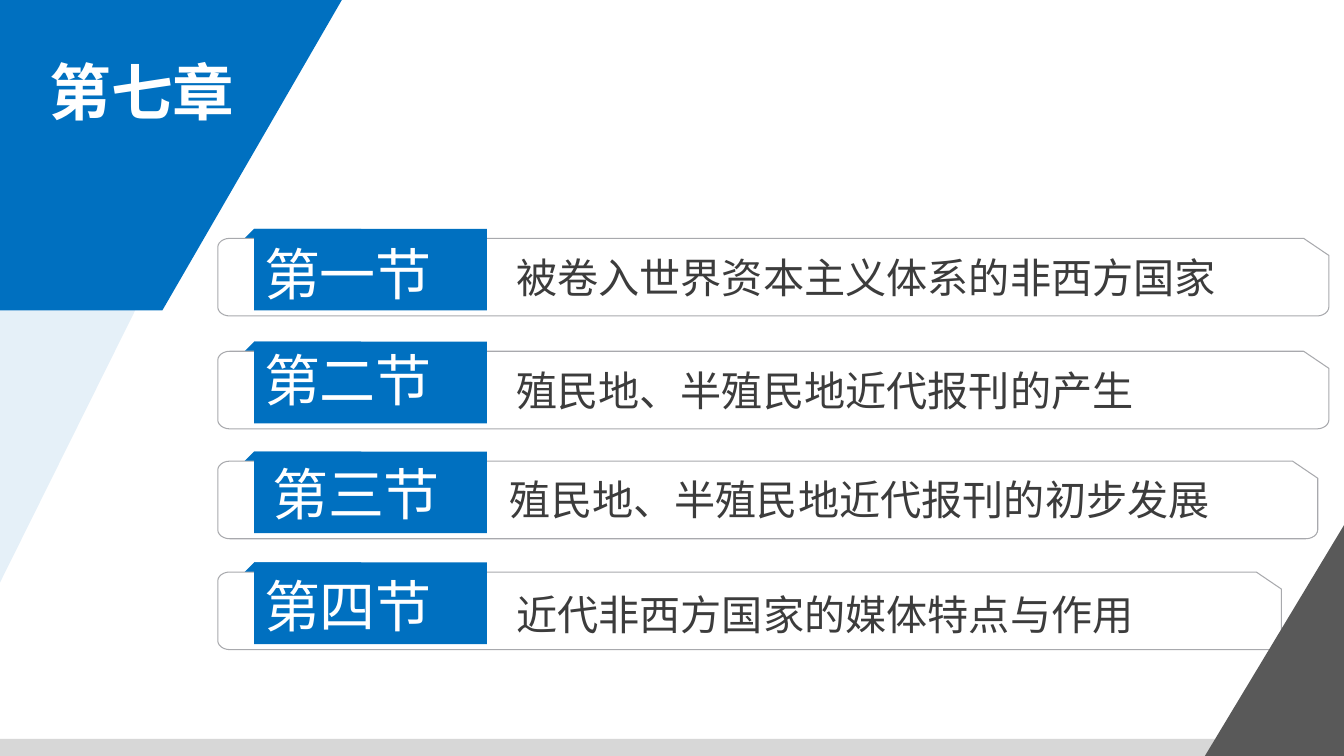
from math import cos, sin, pi
from pptx import Presentation
from pptx.util import Inches, Pt
from pptx.dml.color import RGBColor as RGB
from pptx.enum.shapes import MSO_SHAPE as Shape
from pptx.enum.text import MSO_ANCHOR as Anchor, PP_ALIGN as Align
from pptx.oxml.ns import qn
from lxml.etree import SubElement as Sub

FONT = "Noto Sans CJK SC"
BLUE, GREY, WHITE, INK, EDGE = "0070C0", "595959", "FFFFFF", "3C3C3C", "A8A9AD"

# Tag, its left and top; heading, its left and top; row top and right edge
ROWS = [
    ("第一节", 2.52, 2.32, "被卷入世界资本主义体系的非西方国家", 5.02, 2.45, 2.27, 13.18),
    ("第二节", 2.52, 3.38, "殖民地、半殖民地近代报刊的产生", 5.02, 3.57, 3.39, 13.18),
    ("第三节", 2.6, 4.51, "殖民地、半殖民地近代报刊的初步发展", 4.96, 4.66, 4.48, 13.07),
    ("第四节", 2.52, 5.62, "近代非西方国家的媒体特点与作用", 5.02, 5.8, 5.58, 12.71),
]


def color(code):
    return RGB.from_string(code)


def paint(shape, fill, line=None, alpha=None):
    shape.shadow.inherit = False
    shape.fill.solid()
    shape.fill.fore_color.rgb = color(fill)
    if alpha:
        tone = shape.fill._xPr.find(qn("a:solidFill"))[0]
        Sub(tone, qn("a:alpha"), val=str(alpha * 1000))
    if line:
        shape.line.color.rgb = color(line)
        shape.line.width = Pt(0)
    else:
        shape.line.fill.background()


def poly(slide, points, fill, line=None, alpha=None):
    spots = [(Inches(x), Inches(y)) for x, y in points]
    build = slide.shapes.build_freeform(*spots[0])
    build.add_line_segments(spots[1:], close=True)
    paint(build.convert_to_shape(), fill, line, alpha)


def rect(slide, x, y, w, h, fill, alpha=None):
    box = slide.shapes.add_shape(Shape.RECTANGLE, Inches(x), Inches(y), Inches(w), Inches(h))
    paint(box, fill, alpha=alpha)


def write(box, text, size, code, bold=False):
    frame = box.text_frame
    frame.text = text
    frame.word_wrap = True
    frame.vertical_anchor = Anchor.MIDDLE
    para = frame.paragraphs[0]
    para.alignment = Align.LEFT
    font = para.runs[0].font
    font.size, font.bold, font.name = Pt(size), bold, FONT
    font.color.rgb = color(code)
    Sub(font._element, qn("a:ea"), typeface=FONT)


def label(slide, x, y, w, h, text, size, code):
    box = slide.shapes.add_textbox(Inches(x), Inches(y), Inches(w), Inches(h))
    write(box, text, size, code)


def arc(cx, cy, start):
    """Points of a rounded corner, a quarter turn clockwise from start."""
    turns = [start + pi / 2 * i / 6 for i in range(7)]
    return [(cx + 0.12 * cos(t), cy + 0.09 * sin(t)) for t in turns]


def frame(slide, top, right):
    """Outline with three round corners and one cut corner."""
    left, base = 2.16, top + 0.77
    points = [(right - 0.25, top), (right, top + 0.17)]
    points += arc(right - 0.12, base - 0.09, 0)
    points += arc(left + 0.12, base - 0.09, pi / 2)
    points += arc(left + 0.12, top + 0.09, pi)
    poly(slide, points, WHITE, EDGE)


def row(slide, tag, tag_x, tag_y, head, head_x, head_y, top, right):
    fold = [(2.52, top), (3.58, top), (3.71, top + 0.12), (2.4, top + 0.12)]
    poly(slide, fold, BLUE)
    frame(slide, top + 0.095, right)
    rect(slide, 2.52, top, 2.31, 0.81, BLUE)
    label(slide, head_x, head_y, 8.3, 0.59, head, 29.4, INK)
    label(slide, tag_x, tag_y, 2.31, 0.77, tag, 40, WHITE)


def title(slide, text):
    box = slide.shapes.title
    box.left, box.top = Inches(0.39), Inches(0.48)
    box.width, box.height = Inches(3.12), Inches(0.84)
    write(box, text, 44, WHITE, True)
    # Bring the title in front of the blue panel
    slide.shapes._spTree.append(box._element)


def main():
    deck = Presentation()
    deck.slide_width, deck.slide_height = Inches(13.33), Inches(7.5)
    slide = deck.slides.add_slide(deck.slide_layouts[5])

    # Base decor and corner panels
    poly(slide, [(0.16, 0.24), (0.7, 0.24), (0.16, 1.14)], BLUE)
    rect(slide, 0, 7.33, 13.33, 0.17, GREY, 24)
    poly(slide, [(0.72, 0.84), (0.41, 0.84), (0.72, 0.32)], GREY)
    poly(slide, [(0, 0), (2.87, 0), (0, 5.78)], BLUE, alpha=10)
    poly(slide, [(0, 0), (3.39, 0), (1.61, 3.08), (0, 3.08)], BLUE)

    # Section rows
    for item in ROWS:
        row(slide, *item)

    # Lower right corner and chapter title
    poly(slide, [(13.33, 7.5), (11.95, 7.5), (13.33, 5.21)], GREY)
    title(slide, "第七章")
    deck.save("out.pptx")


if __name__ == "__main__":
    main()
